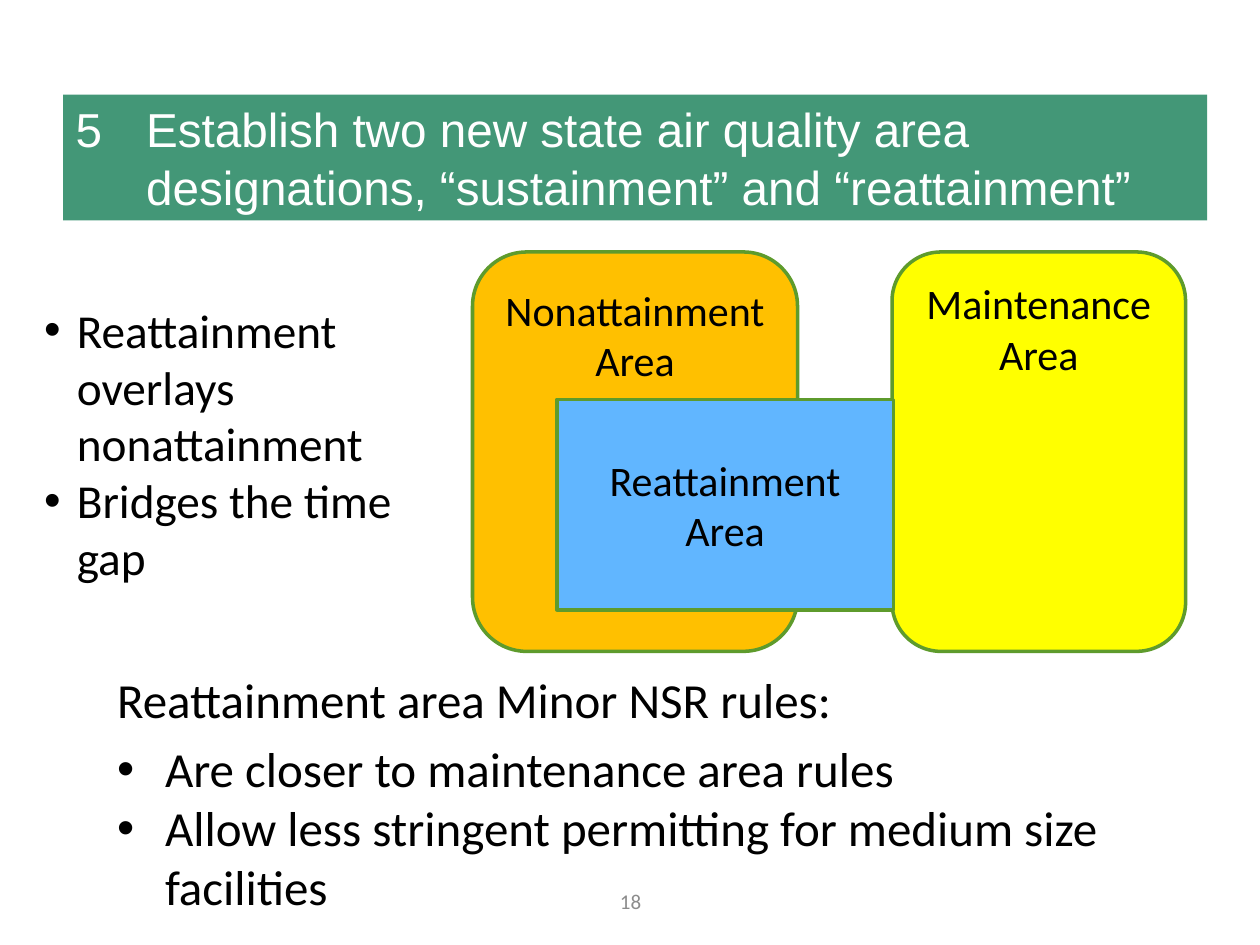
from lxml.etree import SubElement
from pptx import Presentation
from pptx.dml.color import RGBColor
from pptx.enum.shapes import MSO_SHAPE as Shape
from pptx.enum.text import MSO_ANCHOR as Anchor, MSO_AUTO_SIZE as AutoSize, PP_ALIGN as Align
from pptx.oxml.ns import qn
from pptx.util import Inches, Pt

# Content
TITLE = "5\tEstablish two new state air quality area designations, “sustainment” and “reattainment”"
OVERLAY_POINTS = ["Reattainment overlays nonattainment", "Bridges the time gap"]
RULES_HEADING = "Reattainment area Minor NSR rules:"
RULES = [
    "Are closer to maintenance area rules",
    "Allow less stringent permitting for medium size facilities",
]
PAGE_NUMBER = "18"

# Areas: label, preset, box, fill, anchor, top inset
AREAS = [
    ("Nonattainment Area", Shape.ROUNDED_RECTANGLE, (3.75, 2, 2.58, 3.17), "FFC000", Anchor.TOP, 0.13),
    ("Maintenance Area", Shape.ROUNDED_RECTANGLE, (7.08, 2, 2.33, 3.17), "FFFF00", Anchor.TOP, 0.09),
    ("Reattainment Area", Shape.RECTANGLE, (4.42, 3.17, 2.67, 1.67), "61B6FF", Anchor.MIDDLE, 0.05),
]
BORDER = "5E9B2C"


def color(value):
    return RGBColor.from_string(value)


def place(shape, left, top, width, height):
    shape.left, shape.top = Inches(left), Inches(top)
    shape.width, shape.height = Inches(width), Inches(height)


def prepare(shape, anchor=Anchor.TOP):
    frame = shape.text_frame
    frame.word_wrap = True
    frame.auto_size = AutoSize.NONE
    frame.vertical_anchor = anchor
    return frame


def write(paragraph, text, size, font="Calibri", fill="000000", align=Align.LEFT):
    paragraph.alignment = align
    paragraph.space_before = Pt(0)
    run = paragraph.add_run()
    run.text = text
    run.font.size = Pt(size)
    run.font.name = font
    run.font.color.rgb = color(fill)


def indent(paragraph, margin, first=0, bullet=None):
    properties = paragraph._p.get_or_add_pPr()
    properties.set("marL", str(Inches(margin)))
    properties.set("indent", str(Inches(first)))
    if bullet:
        SubElement(properties, qn("a:buFont")).set("typeface", "Arial")
        SubElement(properties, qn("a:buChar")).set("char", bullet)
    else:
        SubElement(properties, qn("a:buNone"))


def write_bullets(frame, items, size, hanging, margin):
    for item in items:
        first = frame.paragraphs[0]
        paragraph = frame.add_paragraph() if first.runs else first
        write(paragraph, item, size)
        indent(paragraph, margin, -hanging, "•")


presentation = Presentation()
presentation.slide_width, presentation.slide_height = Inches(10), Inches(7.5)
slide = presentation.slides.add_slide(presentation.slide_layouts[3])
title, overlay_list, rules_list = slide.placeholders

# Title band
place(title, 0.5, 0.75, 9.08, 1)
title.fill.solid()
title.fill.fore_color.rgb = color("439777")
heading = prepare(title, Anchor.MIDDLE).paragraphs[0]
write(heading, TITLE, 27.2, "Arial", "FFFFFF")
heading.space_after = Pt(6)
indent(heading, 0.56, -0.56)

# Overlay points on the left
place(overlay_list, 0.25, 2.34, 3.33, 2.76)
write_bullets(prepare(overlay_list), OVERLAY_POINTS, 27, 0.26, 0.26)

# Overlapping areas
for label, preset, box, fill, anchor, inset in AREAS:
    area = slide.shapes.add_shape(preset, *map(Inches, box))
    area.shadow.inherit = False
    area.fill.solid()
    area.fill.fore_color.rgb = color(fill)
    area.line.color.rgb = color(BORDER)
    area.line.width = Pt(2)
    frame = prepare(area, anchor)
    frame.margin_top = Inches(inset)
    write(frame.paragraphs[0], label, 24, align=Align.CENTER)

# Rules below the areas
place(rules_list, 0.33, 5.17, 9.33, 2.3)
frame = prepare(rules_list)
heading = frame.paragraphs[0]
write(heading, RULES_HEADING, 28)
heading.line_spacing = 1.2
heading.space_after = Pt(6)
indent(heading, 0.5)
write_bullets(frame, RULES, 28, 0.38, 0.88)

# Page number
number = slide.shapes.add_textbox(*map(Inches, (3.42, 6.95, 3.17, 0.4)))
write(prepare(number, Anchor.MIDDLE).paragraphs[0], PAGE_NUMBER, 12, fill="8C8C8C", align=Align.CENTER)

presentation.save("out.pptx")
